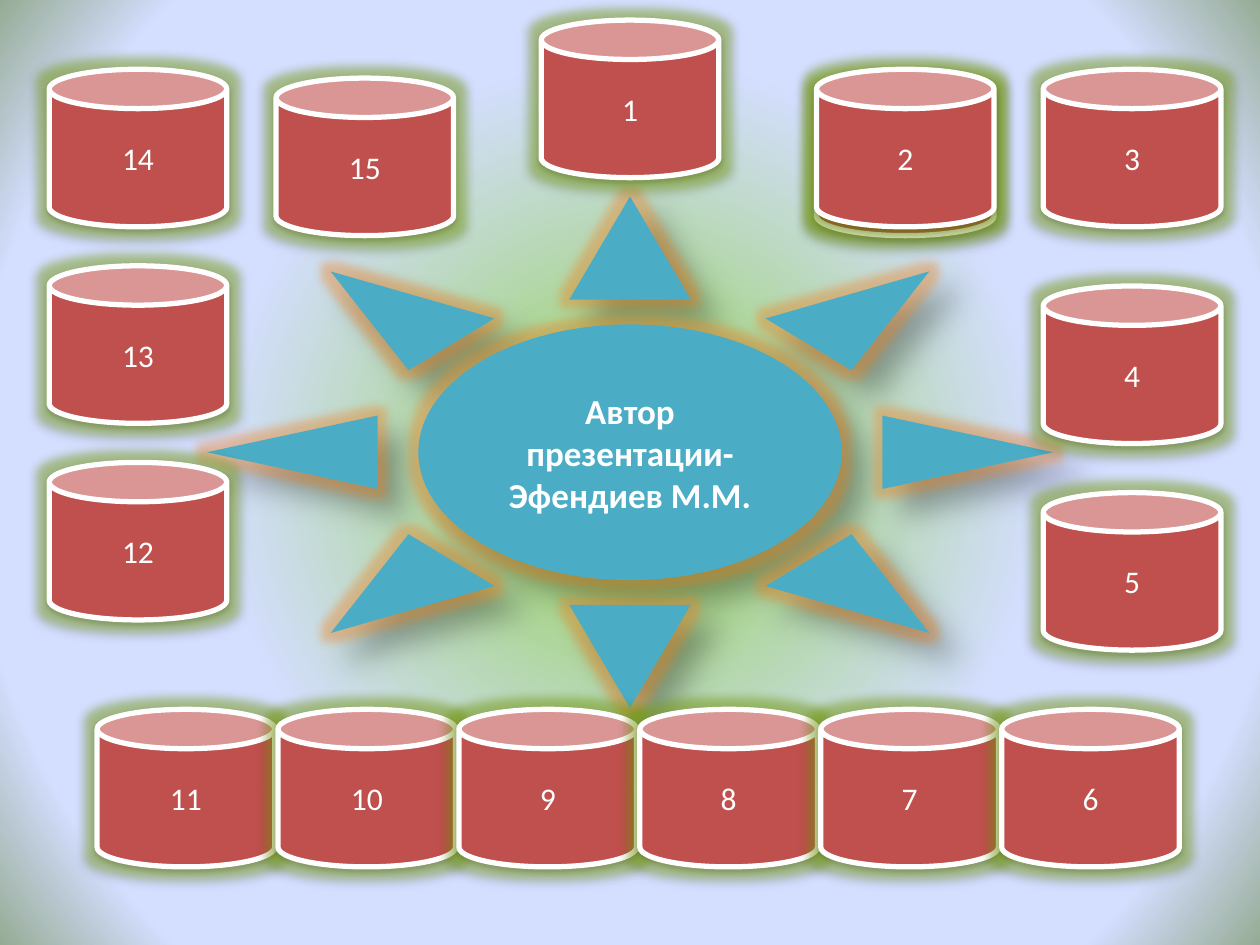
"""Builds a menu slide: a sun in the middle, ringed by numbered cans."""
from pptx import Presentation, util as u
from pptx.dml.color import RGBColor
from pptx.enum import shapes, text
from pptx.oxml import parse_xml
from pptx.oxml.ns import nsdecls, qn

WIDE, HIGH = 10, 7.5
CAN_W, CAN_H = 1.41, 1.25
LEFT, RIGHT = 0.39, 8.28
TOP, BASE = 0.55, 5.63
STOPS = [(0, "92D050", 67), (53, "D4DEFF", 100), (83, "D4DEFF", 100), (100, "96AB94", 100)]


def color(code):
    """Turn a hex string into a colour."""
    return RGBColor.from_string(code)


def draw(kind, box, fill, glow, shade, lines, size, bold):
    """Add a glowing shape with centred lines of text."""
    item = slide.shapes.add_shape(kind, *[u.Inches(v) for v in box])
    item.fill.solid()
    item.fill.fore_color.rgb = color(fill)
    item.line.fill.background()
    item.shadow.inherit = False
    hue, reach = glow
    alpha, blur, dist, turn = shade
    effects = item._element.spPr.find(qn("a:effectLst"))
    effects.append(parse_xml(
        f'<a:glow {nsdecls("a")} rad="{u.Pt(reach)}"><a:srgbClr val="{hue}">'
        '<a:alpha val="40000"/></a:srgbClr></a:glow>'))
    effects.append(parse_xml(
        f'<a:outerShdw {nsdecls("a")} blurRad="{u.Pt(blur)}" dist="{u.Pt(dist)}" '
        f'dir="{turn * 60000}" rotWithShape="0"><a:srgbClr val="000000">'
        f'<a:alpha val="{alpha * 1000}"/></a:srgbClr></a:outerShdw>'))
    frame = item.text_frame
    frame.word_wrap = True
    frame.vertical_anchor = text.MSO_ANCHOR.MIDDLE
    for i, line in enumerate(lines):
        para = frame.add_paragraph() if i else frame.paragraphs[0]
        para.alignment = text.PP_ALIGN.CENTER
        run = para.add_run()
        run.text = line
        run.font.name = "Calibri"
        run.font.size = u.Pt(size)
        run.font.bold = bold
        run.font.color.rgb = color("FFFFFF")
    return item


deck = Presentation()
deck.slide_width, deck.slide_height = u.Inches(WIDE), u.Inches(HIGH)
slide = deck.slides.add_slide(deck.slide_layouts[6])

stops = "".join(
    f'<a:gs pos="{pos * 1000}"><a:srgbClr val="{code}"><a:alpha val="{alpha * 1000}"/>'
    "</a:srgbClr></a:gs>" for pos, code, alpha in STOPS)
slide._element.cSld.insert(0, parse_xml(
    f'<p:bg {nsdecls("p", "a")}><p:bgPr><a:gradFill rotWithShape="1"><a:gsLst>{stops}</a:gsLst>'
    '<a:path path="circle"><a:fillToRect l="50000" t="50000" r="50000" b="50000"/></a:path>'
    "</a:gradFill><a:effectLst/></p:bgPr></p:bg>"))

sun_w, sun_h = 6.72, 4.06
draw(shapes.MSO_SHAPE.SUN, ((WIDE - sun_w) / 2, 1.56, sun_w, sun_h), "4BACC6",
     ("F08020", 11), (30, 15, 18, 45), ["Автор презентации-", "Эфендиев М.М."], 20, True)

cans = [("14", LEFT, TOP), ("15", 2.19, 0.62)]
cans += [(str(11 - i), 0.77 + 1.436 * i, BASE) for i in range(6)]
cans += [("3", RIGHT, TOP), ("", 6.48, 0.62), ("2", 6.48, TOP)]
cans += [(str(13 - i), LEFT, 2.11 + 1.56 * i) for i in range(2)]
cans += [(str(5 - i), RIGHT, 3.91 - 1.64 * i) for i in range(2)]
cans += [("1", (WIDE - CAN_W) / 2, 0.16)]
for label, x, y in cans:
    can = draw(shapes.MSO_SHAPE.CAN, (x, y, CAN_W, CAN_H), "C0504D", ("86B20A", 11),
               (38, 3.1, 1.6, 90), [label] if label else [], 18, False)
    can.line.color.rgb = color("FFFFFF")
    can.line.width = u.Pt(3)

deck.save("out.pptx")
